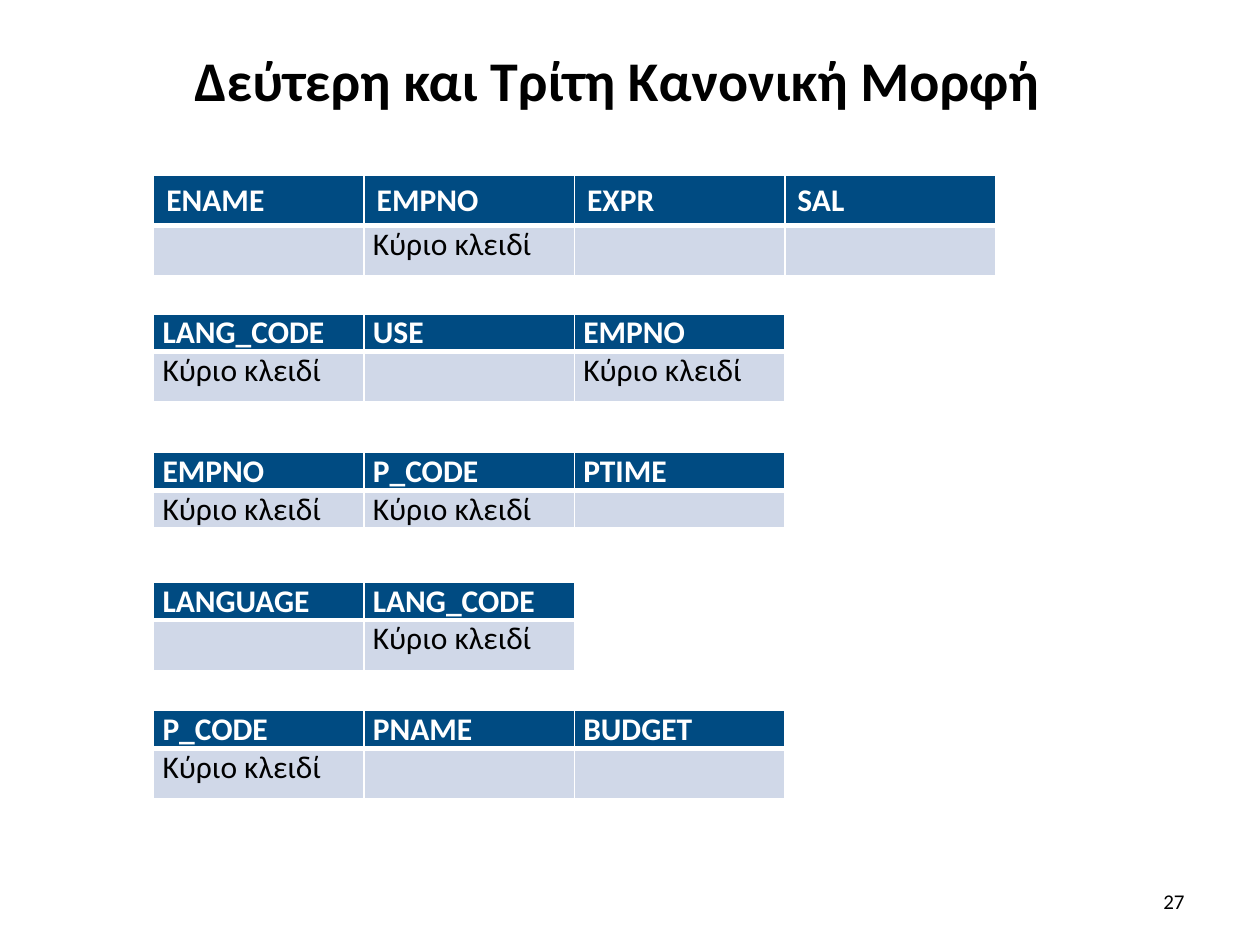
from lxml.etree import SubElement
from pptx import Presentation
from pptx.dml.color import RGBColor
from pptx.enum.text import MSO_ANCHOR, PP_ALIGN
from pptx.oxml.ns import qn
from pptx.util import Inches, Pt

THEME = {
    "font": "Calibri", "ink": "000000", "paper": "FFFFFF",
    "head": "004B82", "body": "D0D8E8",
    "title": 32, "cell": 18, "page": 12, "thin": 1, "thick": 3,
}
TITLE = "Δεύτερη και Τρίτη Κανονική Μορφή"
PAGE = "27"
KEY = "Κύριο κλειδί"
LEFT, COL = 1.22, 1.67
TABLES = [
    {"top": 1.39, "rows": (0.4, 0.4), "pad": (0.1, 0.05), "side": PP_ALIGN.LEFT,
     "names": ["ENAME", "EMPNO", "EXPR", "SAL"], "keys": ["EMPNO"]},
    {"top": 2.49, "rows": (0.3, 0.4),
     "names": ["LANG_CODE", "USE", "EMPNO"], "keys": ["LANG_CODE", "EMPNO"]},
    {"top": 3.59, "rows": (0.3, 0.3),
     "names": ["EMPNO", "P_CODE", "PTIME"], "keys": ["EMPNO", "P_CODE"]},
    {"top": 4.62, "rows": (0.3, 0.4),
     "names": ["LANGUAGE", "LANG_CODE"], "keys": ["LANG_CODE"]},
    {"top": 5.64, "rows": (0.3, 0.4),
     "names": ["P_CODE", "PNAME", "BUDGET"], "keys": ["P_CODE"]},
]


def style(para, size, color, bold, align):
    """Format a paragraph and its runs."""
    para.alignment = align
    for run in para.runs:
        font = run.font
        font.name, font.size, font.bold = THEME["font"], Pt(size), bold
        font.color.rgb = RGBColor.from_string(color)


def add_text(slide, box, text, size, bold, align, right=0.1):
    """Add one middle-anchored line of text."""
    frame = slide.shapes.add_textbox(*map(Inches, box)).text_frame
    frame.word_wrap = True
    frame.vertical_anchor = MSO_ANCHOR.MIDDLE
    frame.margin_right = Inches(right)
    frame.text = text
    style(frame.paragraphs[0], size, THEME["ink"], bold, align)


def rule(cell, head):
    """Draw the cell borders, thick between header and body."""
    props = cell._tc.get_or_add_tcPr()
    heavy = "lnB" if head else "lnT"
    for edge in ("lnL", "lnR", "lnT", "lnB"):
        width = THEME["thick" if edge == heavy else "thin"]
        line = SubElement(props, qn(f"a:{edge}"), w=str(Pt(width)))
        fill = SubElement(line, qn("a:solidFill"))
        SubElement(fill, qn("a:srgbClr"), val=THEME["paper"])


def fill_cell(cell, text, head, pad, align):
    """Write and colour one cell."""
    rule(cell, head)
    cell.fill.solid()
    cell.fill.fore_color.rgb = RGBColor.from_string(THEME["head" if head else "body"])
    cell.margin_left = cell.margin_right = Inches(pad[0])
    cell.margin_top = cell.margin_bottom = Inches(pad[1])
    cell.text_frame.text = text
    color = THEME["paper" if head else "ink"]
    style(cell.text_frame.paragraphs[0], THEME["cell"], color, head, align)


def add_grid(slide, data):
    """Add a relation as a header row and a key row."""
    names, rows = data["names"], data["rows"]
    marks = [KEY if name in data["keys"] else "" for name in names]
    box = LEFT, data["top"], COL * len(names), sum(rows)
    grid = slide.shapes.add_table(2, len(names), *map(Inches, box)).table
    for col in grid.columns:
        col.width = Inches(COL)
    for r, texts in enumerate((names, marks)):
        grid.rows[r].height = Inches(rows[r])
        head = r == 0
        pad = data.get("pad", (0.07, 0)) if head else (0.07, 0)
        align = data.get("side", PP_ALIGN.JUSTIFY) if head else PP_ALIGN.JUSTIFY
        for c, text in enumerate(texts):
            fill_cell(grid.cell(r, c), text, head, pad, align)


def main():
    """Build the slide and save it."""
    deck = Presentation()
    deck.slide_width, deck.slide_height = Inches(10), Inches(7.5)
    slide = deck.slides.add_slide(deck.slide_layouts[6])
    add_text(slide, (0.51, 0.13, 9, 0.99), TITLE, THEME["title"], True,
             PP_ALIGN.CENTER, 0.32)
    for data in TABLES:
        add_grid(slide, data)
    add_text(slide, (7.17, 6.95, 2.33, 0.4), PAGE, THEME["page"], False,
             PP_ALIGN.RIGHT)
    deck.save("out.pptx")


if __name__ == "__main__":
    main()
